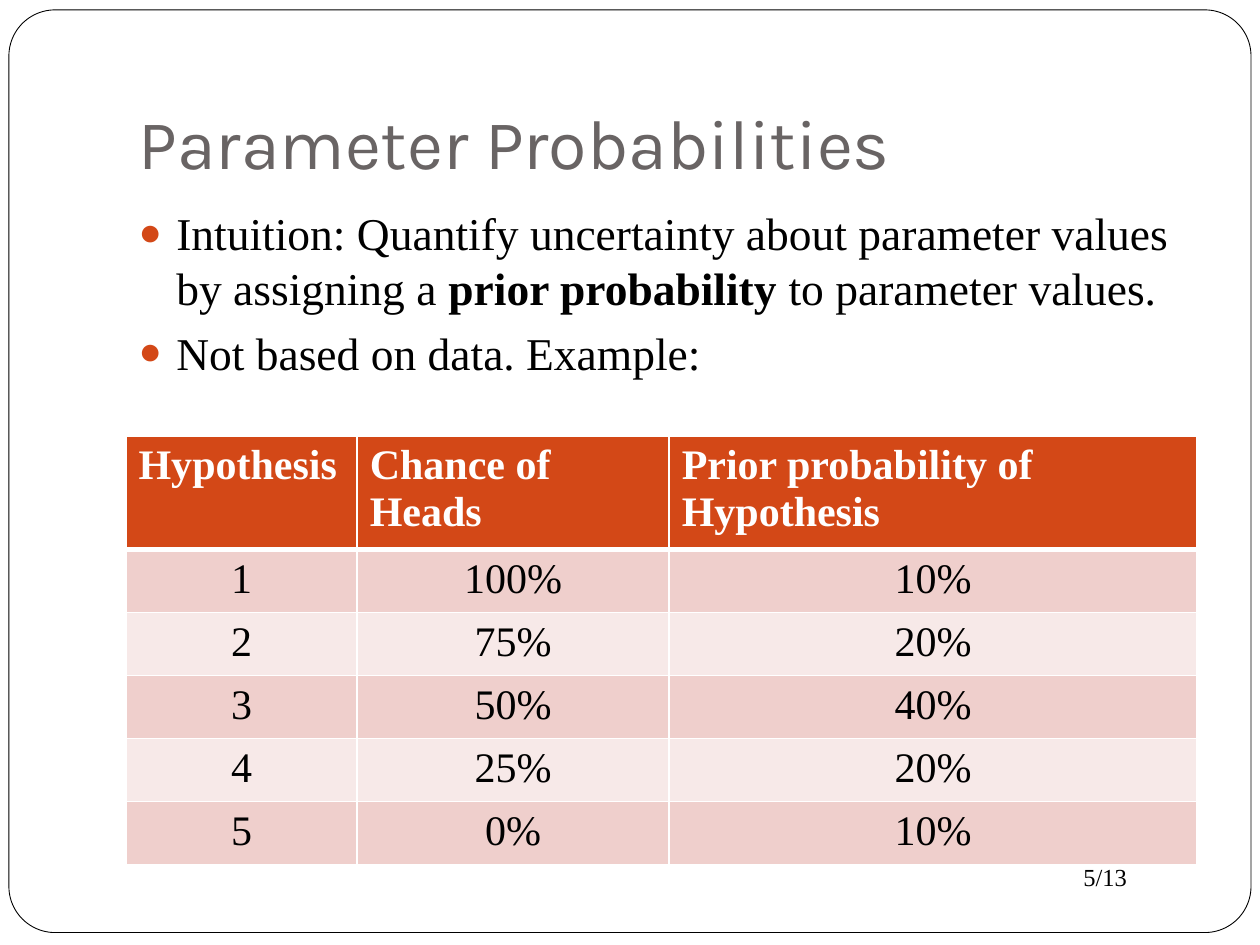
from dataclasses import dataclass

from lxml.etree import SubElement
from pptx import Presentation
from pptx.dml.color import RGBColor
from pptx.enum.shapes import MSO_SHAPE
from pptx.enum.text import MSO_ANCHOR, MSO_AUTO_SIZE, PP_ALIGN
from pptx.oxml.ns import qn
from pptx.util import Cm, Pt


@dataclass(frozen=True)
class Theme:
    head: str = "Karla"
    text: str = "Times New Roman"
    ink: str = "000000"
    grey: str = "696464"
    white: str = "FFFFFF"
    rust: str = "D34817"
    rose: str = "EFCFCC"
    pale: str = "F7E9E8"
    title: int = 40
    body: int = 26
    cell: int = 24
    page: int = 14


theme = Theme()


def style(run, size, color, face=theme.text, bold=False):
    font = run.font
    font.name, font.size, font.bold = face, Pt(size), bold
    font.color.rgb = RGBColor.from_string(color)


def edge(cell, widths):
    """Draw white borders, given in points by side."""
    props = cell._tc.get_or_add_tcPr()
    for spot, (side, width) in enumerate(widths.items()):
        line = props.makeelement(qn(f"a:ln{side}"), {"w": str(Pt(width))})
        fill = SubElement(line, qn("a:solidFill"))
        SubElement(fill, qn("a:srgbClr"), val=theme.white)
        props.insert(spot, line)


deck = Presentation()
deck.slide_width, deck.slide_height = Cm(25.4), Cm(19.05)
slide = deck.slides.add_slide(deck.slide_layouts[1])
shapes = slide.shapes

# Frame, behind everything else
frame = shapes.add_shape(
    MSO_SHAPE.ROUNDED_RECTANGLE, Cm(0.18), Cm(0.2), Cm(25.04), Cm(18.6))
frame.adjustments[0] = 0.05
frame.shadow.inherit = False
frame.fill.solid()
frame.fill.fore_color.rgb = RGBColor.from_string(theme.white)
frame.line.color.rgb = RGBColor.from_string(theme.ink)
frame.line.width = Pt(0.5)
shapes._spTree.insert(2, frame._element)

# Page number
page = shapes.add_textbox(Cm(21.59), Cm(17.25), Cm(2.54), Cm(0.86))
page.text_frame.word_wrap = True
page.text_frame.text = "5/13"
style(page.text_frame.paragraphs[0].runs[0], theme.page, theme.ink)

# Title
title = shapes.title
title.left, title.top, title.width, title.height = (
    Cm(2.54), Cm(0.76), Cm(21.59), Cm(3.18))
frame = title.text_frame
frame.text = "Parameter Probabilities"
frame.auto_size = MSO_AUTO_SIZE.NONE
frame.vertical_anchor = MSO_ANCHOR.BOTTOM
frame.margin_bottom = Cm(0.25)
frame.paragraphs[0].alignment = PP_ALIGN.LEFT
style(frame.paragraphs[0].runs[0], theme.title, theme.grey, theme.head)

# Bullets: each point is a list of (text, bold) pieces
points = [
    [("Intuition: Quantify uncertainty about parameter values by assigning a ",
      False),
     ("prior probability ", True),
     ("to parameter values.", False)],
    [("Not based on data. Example:", False)],
]
body = slide.placeholders[1]
body.left, body.top, body.width, body.height = (
    Cm(2.54), Cm(4.01), Cm(21.59), Cm(4.7))
frame = body.text_frame
frame.auto_size = MSO_AUTO_SIZE.NONE
for spot, point in enumerate(points):
    para = frame.add_paragraph() if spot else frame.paragraphs[0]
    para.space_before = Pt(5.8)
    for text, bold in point:
        run = para.add_run()
        run.text = text
        style(run, theme.body, theme.ink, bold=bold)
    props = para._p.get_or_add_pPr()
    props.set("marL", str(Cm(0.76)))
    props.set("indent", str(-Cm(0.76)))
    color = SubElement(props, qn("a:buClr"))
    SubElement(color, qn("a:srgbClr"), val=theme.rust)
    SubElement(props, qn("a:buSzPct"), val="85000")
    SubElement(props, qn("a:buFont"), typeface=theme.text)
    SubElement(props, qn("a:buChar"), char="●")

# Table
rows = [
    ("Hypothesis", "Chance of Heads", "Prior probability of Hypothesis"),
    ("1", "100%", "10%"),
    ("2", "75%", "20%"),
    ("3", "50%", "40%"),
    ("4", "25%", "20%"),
    ("5", "0%", "10%"),
]
widths = [4.66, 6.29, 10.64]
table = shapes.add_table(
    len(rows), len(widths), Cm(2.54), Cm(8.79), Cm(21.59), Cm(8.06)).table
for col, width in zip(table.columns, widths):
    col.width = Cm(width)
for r, row in enumerate(rows):
    top = r == 0
    table.rows[r].height = Cm(2.11 if top else 1.19)
    fill = theme.rust if top else theme.rose if r % 2 else theme.pale
    for c, text in enumerate(row):
        cell = table.cell(r, c)
        cell.text_frame.text = text
        cell.fill.solid()
        cell.fill.fore_color.rgb = RGBColor.from_string(fill)
        para = cell.text_frame.paragraphs[0]
        para.alignment = PP_ALIGN.LEFT if top else PP_ALIGN.CENTER
        style(para.runs[0], theme.cell,
              theme.white if top else theme.ink, bold=top)
        edge(cell, {"L": 1, "R": 1, "T": 3 if r == 1 else 1,
                    "B": 3 if top else 1})

deck.save("out.pptx")
